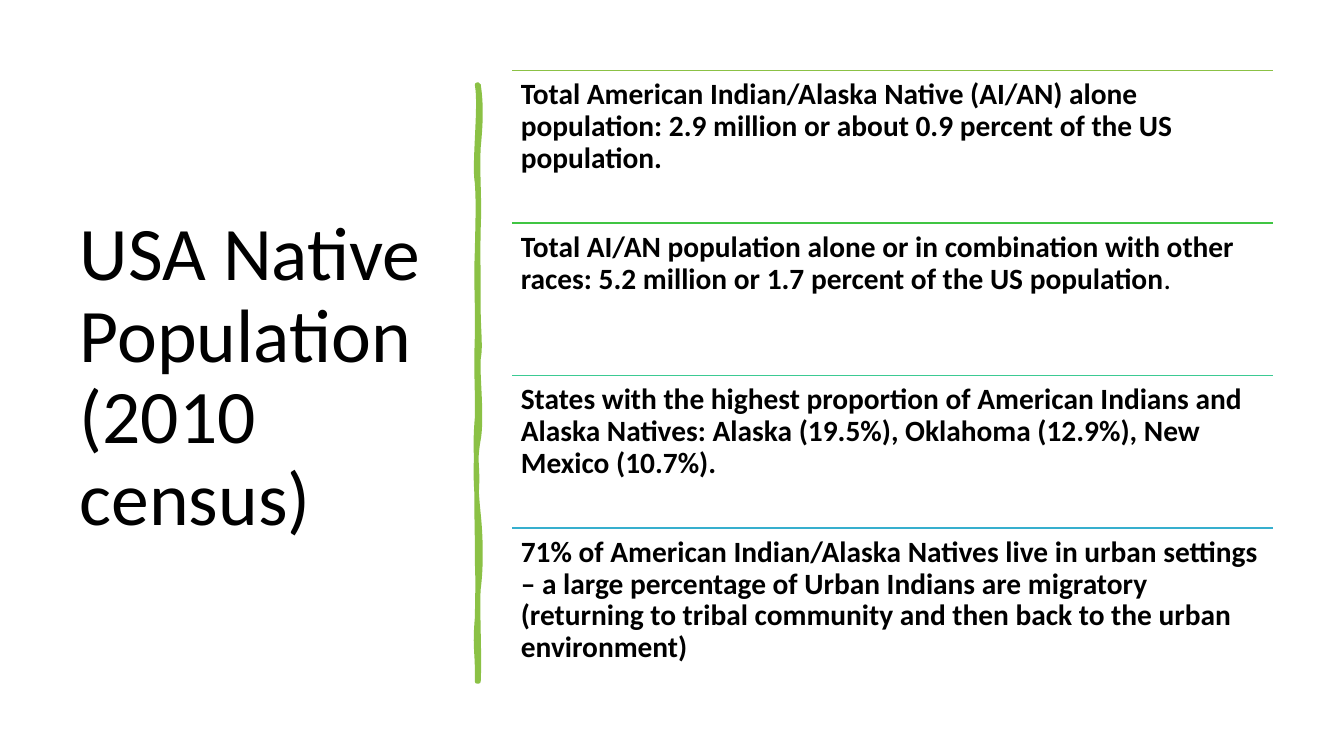
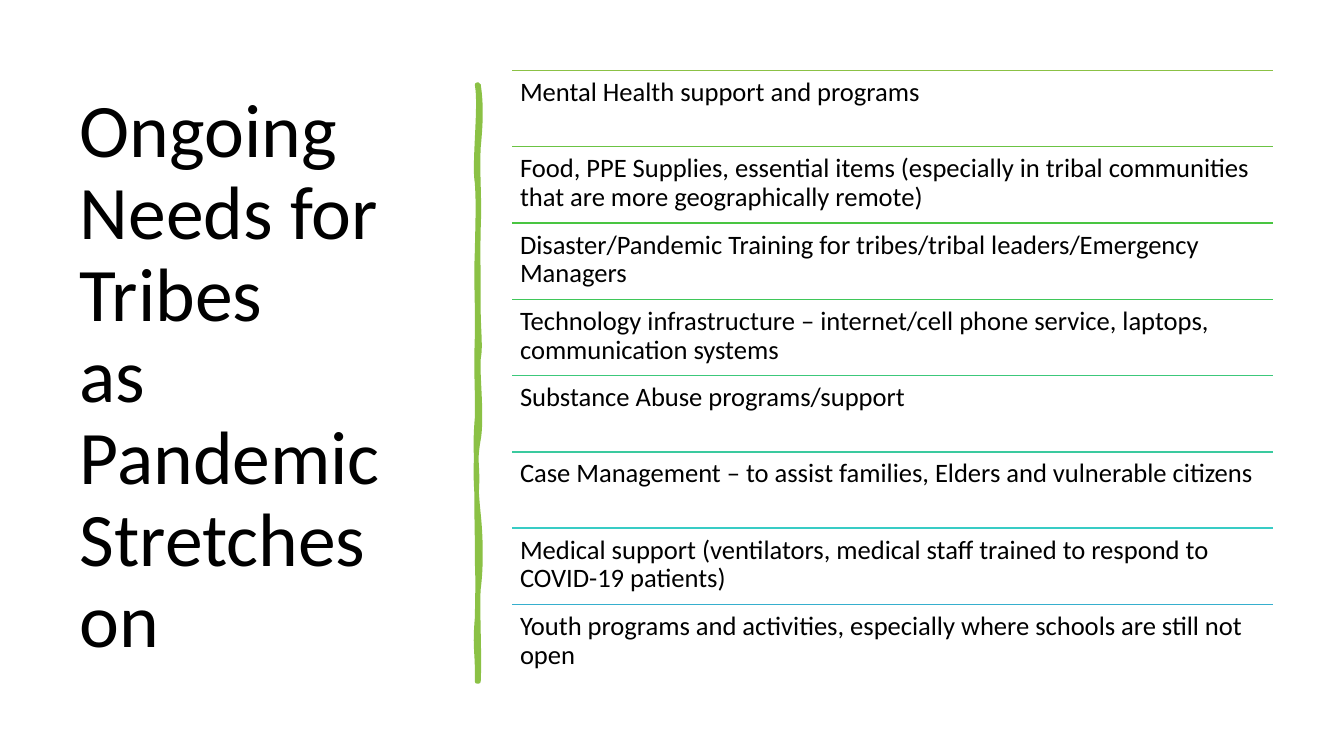
from lxml.etree import SubElement
from pptx import Presentation
from pptx.dml.color import RGBColor
from pptx.enum.shapes import MSO_CONNECTOR
from pptx.enum.text import MSO_ANCHOR
from pptx.oxml.ns import qn
from pptx.util import Pt

# Content: each row is a rule colour and a list of (text, bold) pieces
COLORS = {"text": "000000", "brush": "8BC145"}
SLIDES = [
    {
        "title": "USA Native Population (2010 census)",
        "size": 21,
        "rows": [
            ("8BC145", [("Total American Indian/Alaska Native (AI/AN) alone population: "
                         "2.9 million or about 0.9 percent of the US population.", True)]),
            ("40C543", [("Total AI/AN population alone or in combination with other races: "
                         "5.2 million or 1.7 percent of the US population", True), (".", False)]),
            ("3BCA93", [("States with the highest proportion of American Indians and Alaska "
                         "Natives: Alaska (19.5%), Oklahoma (12.9%), New Mexico (10.7%).", True)]),
            ("36AFCE", [("71% of American Indian/Alaska Natives live in urban settings – a large "
                         "percentage of Urban Indians are migratory (returning to tribal "
                         "community and then back to the urban environment)", True)]),
        ],
    },
    {
        "title": "Ongoing Needs for Tribes\vas Pandemic Stretches on",
        "size": 19,
        "rows": [
            ("8BC145", [("Mental Health support and programs", False)]),
            ("6BC343", [("Food, PPE Supplies, essential items (especially in tribal communities "
                         "that are more geographically remote)", False)]),
            ("49C541", [("Disaster/Pandemic Training for tribes/tribal leaders/Emergency "
                         "Managers", False)]),
            ("3FC759", [("Technology infrastructure – internet/cell phone service, laptops, "
                         "communication systems", False)]),
            ("3CC87B", [("Substance Abuse programs/support", False)]),
            ("3ACA9F", [("Case Management – to assist families, Elders and vulnerable "
                         "citizens", False)]),
            ("38CCC5", [("Medical support (ventilators, medical staff trained to respond to "
                         "COVID-19 patients)", False)]),
            ("36AFCE", [("Youth programs and activities, especially where schools are still "
                         "not open", False)]),
        ],
    },
]

# Layout in px, 150 to the inch
PX = 6096
SLIDE_WIDTH, SLIDE_HEIGHT = 2000, 1125
TITLE_BOX = (104, 105, 561, 916)
TITLE_SIZE = 54
ROWS_LEFT, ROWS_TOP, ROWS_WIDTH, ROWS_HEIGHT = 762, 105, 1132, 908
INSET_PER_POINT = 0.625
FONT = "Calibri"

# Brush stroke: start, then cubic curves (control, control, end), down and back up
BRUSH_START = (712, 126)
BRUSH_CURVES = [
    ((716, 153), (716, 178), (712, 219)),
    ((710, 260), (714, 292), (712, 339)),
    ((711, 386), (712, 393), (712, 441)),
    ((711, 488), (716, 513), (712, 534)),
    ((710, 555), (718, 621), (712, 654)),
    ((706, 686), (708, 726), (712, 765)),
    ((716, 804), (716, 846), (712, 876)),
    ((710, 904), (714, 975), (712, 1014)),
    ((711, 1014), (710, 1014), (710, 1014)),
    ((711, 969), (706, 966), (710, 920)),
    ((711, 874), (711, 855), (710, 836)),
    ((711, 816), (708, 742), (710, 716)),
    ((710, 688), (706, 668), (710, 622)),
    ((711, 579), (708, 560), (710, 502)),
    ((711, 447), (708, 422), (710, 375)),
    ((711, 327), (712, 300), (710, 272)),
    ((705, 244), (716, 156), (710, 126)),
]


def px(*lengths):
    return [round(length * PX) for length in lengths]


def style_line(line, color, width):
    line.color.rgb = RGBColor.from_string(color)
    line.width = Pt(width)


def add_text(slide, box, size, pieces, frame_format):
    frame = slide.shapes.add_textbox(*px(*box)).text_frame
    for name, value in {"word_wrap": True, **frame_format}.items():
        setattr(frame, name, value)
    paragraph = frame.paragraphs[0]
    paragraph.line_spacing = 0.9
    for text, bold in pieces:
        for index, part in enumerate(text.split("\v")):
            if index:
                paragraph.add_line_break()
            run = paragraph.add_run()
            run.text = part
            for name, value in {"name": FONT, "size": Pt(size), "bold": bold}.items():
                setattr(run.font, name, value)
            run.font.color.rgb = RGBColor.from_string(COLORS["text"])


def add_brush(slide):
    builder = slide.shapes.build_freeform(*px(*BRUSH_START))
    builder.add_line_segments([px(*curve[-1]) for curve in BRUSH_CURVES], close=True)
    brush = builder.convert_to_shape()
    brush.shadow.inherit = False
    brush.fill.solid()
    brush.fill.fore_color.rgb = RGBColor.from_string(COLORS["brush"])
    style_line(brush.line, COLORS["brush"], 3.25)
    SubElement(brush._element.spPr.find(qn("a:ln")), qn("a:round"))
    # Bend each straight segment into its curve
    segments = list(brush._element.spPr.iter(qn("a:lnTo")))
    for segment, curve in zip(segments, BRUSH_CURVES):
        bend = segment.makeelement(qn("a:cubicBezTo"))
        for point in curve:
            x, y = px(*point)
            SubElement(bend, qn("a:pt"), x=str(x - brush.left), y=str(y - brush.top))
        segment.getparent().replace(segment, bend)


def add_rows(slide, rows, size):
    row_height = ROWS_HEIGHT / len(rows)
    inset = px(size * INSET_PER_POINT)[0]
    insets = {f"margin_{side}": inset for side in ("left", "top", "right", "bottom")}
    for index, (color, pieces) in enumerate(rows):
        top = ROWS_TOP + index * row_height
        rule = slide.shapes.add_connector(
            MSO_CONNECTOR.STRAIGHT, *px(ROWS_LEFT, top, ROWS_LEFT + ROWS_WIDTH, top))
        style_line(rule.line, color, 1)
        SubElement(rule._element.spPr, qn("a:effectLst"))
        add_text(slide, (ROWS_LEFT, top, ROWS_WIDTH, row_height), size, pieces, insets)


def main():
    deck = Presentation()
    deck.slide_width, deck.slide_height = px(SLIDE_WIDTH, SLIDE_HEIGHT)
    for content in SLIDES:
        slide = deck.slides.add_slide(deck.slide_layouts[6])
        add_text(slide, TITLE_BOX, TITLE_SIZE, [(content["title"], False)],
                 {"vertical_anchor": MSO_ANCHOR.MIDDLE})
        add_brush(slide)
        add_rows(slide, content["rows"], content["size"])
    deck.save("out.pptx")


if __name__ == "__main__":
    main()
